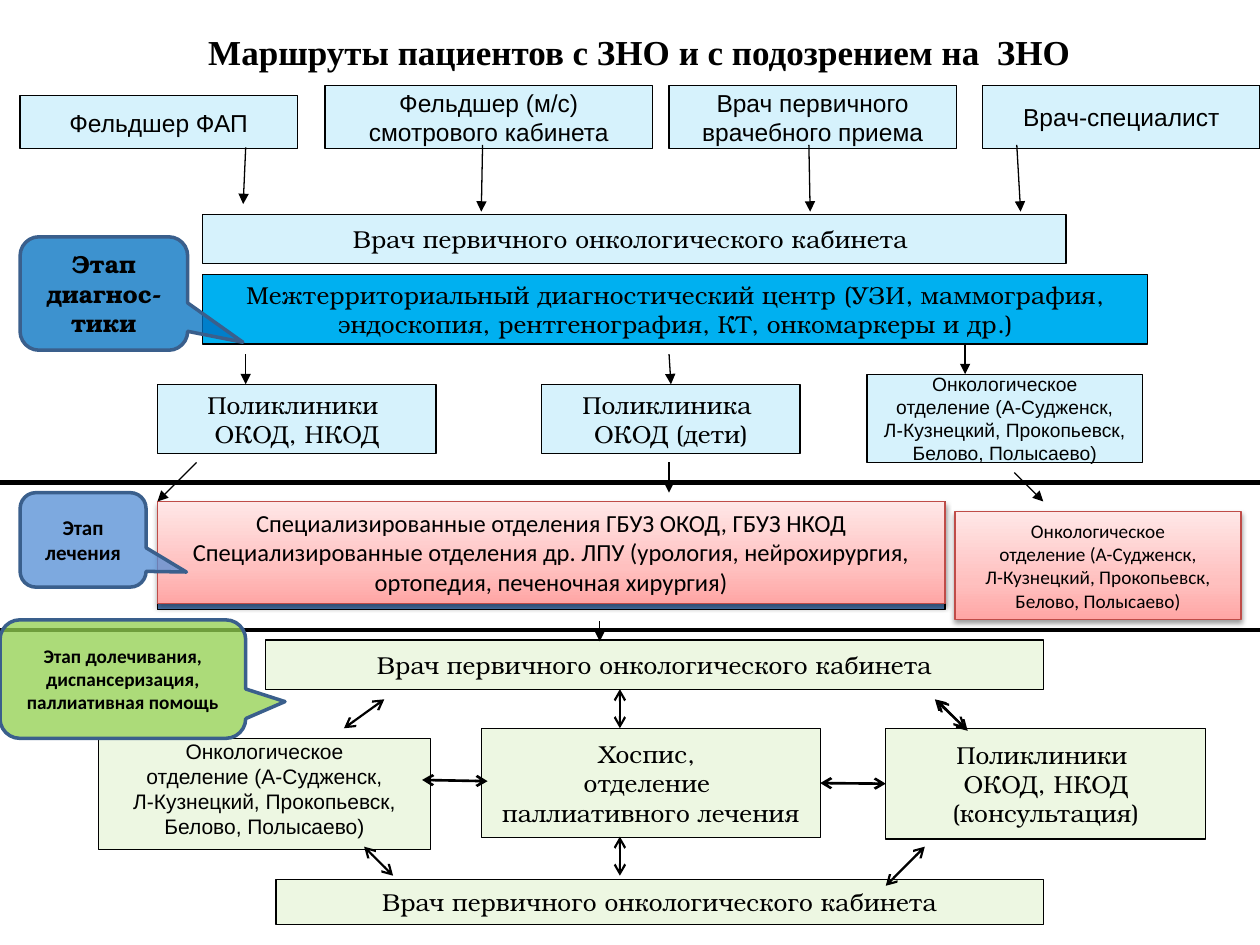
from lxml.etree import SubElement
from pptx import Presentation
from pptx.dml.color import RGBColor
from pptx.enum.shapes import MSO_CONNECTOR as CONNECTOR, MSO_SHAPE as SHAPE
from pptx.enum.text import MSO_ANCHOR as ANCHOR, PP_ALIGN as ALIGN
from pptx.oxml.ns import qn
from pptx.util import Inches, Pt

SERIF, SANS, BODY = "TeX Gyre Bonum", "Arial", "Calibri"
BLUE, GREEN, PINK = "00B0F0", "92D050", "FFA6A5"
PINK_STOPS = [(0, PINK), (35, "FFC0BF"), (100, "FFE7E7")]
color = RGBColor.from_string


def add_box(place, text, font, size, fill, alpha=100, tip=None, wrap=False):
    """Add a box, or a callout when tip is given; a pink one gets a gradient and a shadow."""
    kind = SHAPE.ROUNDED_RECTANGULAR_CALLOUT if tip else SHAPE.RECTANGLE
    shape = slide.shapes.add_shape(kind, *[Inches(value) for value in place])
    shape.shadow.inherit = False
    properties = shape._element.spPr
    shape.line.color.rgb = color("3A5F8C" if tip else "BF4C48" if fill == PINK else "000000")
    shape.line.width = Pt(2 if tip else 0.75)
    if tip:
        for index, value in enumerate((*tip, 0.167)):
            shape.adjustments[index] = value
    if fill == PINK:
        shape.fill.gradient()
        shape.fill.gradient_angle = 90
        stops = properties.find(".//" + qn("a:gsLst"))
        for stop in list(stops):
            stops.remove(stop)
        for position, stop_color in PINK_STOPS:
            stop = SubElement(stops, qn("a:gs"), pos=str(position * 1000))
            SubElement(stop, qn("a:srgbClr"), val=stop_color)
        shadow = SubElement(properties.find(qn("a:effectLst")), qn("a:outerShdw"),
                            blurRad="40000", dist="20000", dir="5400000", rotWithShape="0")
        shadow_color = SubElement(shadow, qn("a:srgbClr"), val="000000")
        SubElement(shadow_color, qn("a:alpha"), val="38000")
    else:
        shape.fill.solid()
        shape.fill.fore_color.rgb = color(fill)
        if alpha < 100:
            fill_color = properties.find(qn("a:solidFill")).find(qn("a:srgbClr"))
            SubElement(fill_color, qn("a:alpha"), val=str(alpha * 1000))
    frame = shape.text_frame
    frame.word_wrap = wrap or tip is not None
    frame.vertical_anchor = ANCHOR.MIDDLE
    for index, line in enumerate(text.split("\n") if text else []):
        paragraph = frame.add_paragraph() if index else frame.paragraphs[0]
        paragraph.alignment = ALIGN.CENTER
        run = paragraph.add_run()
        run.text = line
        run.font.name, run.font.size = font, Pt(size)
        run.font.bold = tip is not None
        run.font.color.rgb = color("000000")
    return shape


def add_line(ends, width=0.75, head=None, tail=None):
    connector = slide.shapes.add_connector(CONNECTOR.STRAIGHT, *[Inches(value) for value in ends])
    connector.line.color.rgb = color("000000")
    connector.line.width = Pt(width)
    for tag, arrow in (("a:headEnd", head), ("a:tailEnd", tail)):
        if arrow:
            SubElement(connector.line._get_or_add_ln(), qn(tag), type=arrow)
    SubElement(connector._element.spPr, qn("a:effectLst"))
    return connector


presentation = Presentation()
presentation.slide_width, presentation.slide_height = Inches(10), Inches(7.5)
slide = presentation.slides.add_slide(presentation.slide_layouts[5])

# Title
title = slide.shapes.title
title.left, title.top, title.width, title.height = [Inches(v) for v in (0.43, 0.13, 9.29, 0.55)]
title.text_frame.vertical_anchor = ANCHOR.MIDDLE
paragraph = title.text_frame.paragraphs[0]
paragraph.alignment = ALIGN.CENTER
run = paragraph.add_run()
run.text = "Маршруты пациентов с ЗНО и с подозрением на  ЗНО"
run.font.name, run.font.size, run.font.bold = "Times New Roman", Pt(20), True
run.font.color.rgb = color("000000")

# Wording that several boxes share
office = "Врач первичного онкологического кабинета"
department = ("Онкологическое\nотделение (А-Судженск,\n"
              "Л-Кузнецкий, Прокопьевск,\nБелово, Полысаево)")
clinics = "Поликлиники \nОКОД, НКОД"

# First contact and diagnostics
for place, text, font in [
    ((0.16, 0.76, 2.2, 0.42), "Фельдшер ФАП", SANS),
    ((2.58, 0.68, 2.6, 0.5), "Фельдшер (м/с)\nсмотрового кабинета", SANS),
    ((5.31, 0.68, 2.28, 0.5), "Врач первичного\nврачебного приема", SANS),
    ((7.8, 0.68, 2.2, 0.5), "Врач-специалист", SANS),
    ((1.61, 1.7, 6.85, 0.39), office + " ", SERIF),
    ((1.25, 3.05, 2.21, 0.55), clinics, SERIF),
]:
    add_box(place, text, font, 14, BLUE, 16)
children_clinic = add_box((4.3, 3.05, 2.05, 0.55), "Поликлиника \nОКОД (дети)", SERIF, 14, BLUE, 16)
add_box((6.88, 2.97, 2.19, 0.7), department, SANS, 11, BLUE, 16)
add_box((1.61, 2.18, 7.5, 0.55),
        "Межтерриториальный диагностический центр (УЗИ, маммография,\n"
        "эндоскопия, рентгенография, КТ, онкомаркеры и др.)", SERIF, 14, BLUE)

# Treatment
add_box((7.58, 4.06, 2.27, 0.86), department, BODY, 11, PINK)
add_box((1.25, 3.98, 6.25, 0.86), "", BODY, 14, "4F81BD")
treatment = add_box(
    (1.25, 3.98, 6.25, 0.81),
    "Специализированные отделения ГБУЗ ОКОД, ГБУЗ НКОД\n"
    "Специализированные отделения др. ЛПУ (урология, нейрохирургия, "
    "ортопедия, печеночная хирургия)", BODY, 14, PINK, wrap=True)
treatment.text_frame.vertical_anchor = ANCHOR.TOP

# Aftercare
for place in ((2.11, 5.08, 6.17, 0.39), (2.19, 6.98, 6.09, 0.36)):
    add_box(place, office, SERIF, 14, GREEN, 16)
aftercare = add_box((0.78, 5.86, 2.64, 0.88), department, SANS, 12, GREEN, 16)
aftercare.text_frame.margin_bottom = Inches(0.13)
hospice = add_box((3.82, 5.78, 2.69, 0.87), "Хоспис, \nотделение \nпаллиативного лечения",
                  SERIF, 14, GREEN, 16)
consultation = add_box((7.03, 5.78, 2.54, 0.88), clinics + "\n(консультация)", SERIF, 14, GREEN, 16)

# One-way arrows
for ends in [
    (1.95, 1.17, 1.93, 1.62), (3.83, 1.15, 3.82, 1.68),
    (6.42, 1.15, 6.43, 1.68), (8.07, 1.15, 8.1, 1.68),
    (1.95, 2.81, 1.95, 3.05), (7.66, 2.73, 7.66, 2.97),
    (4.76, 4.93, 4.76, 5.09), (1.56, 3.67, 1.25, 3.98),
    (5.31, 3.67, 5.31, 3.91), (8.05, 3.75, 8.28, 3.98),
]:
    add_line(ends, tail="triangle")
to_children = add_line((5.31, 2.81, 5.31, 3.05), tail="triangle")
to_children.end_connect(children_clinic, 0)

# Two-way arrows
for ends in [
    (7.42, 5.55, 7.66, 5.78), (7.44, 5.56, 7.68, 5.8), (2.89, 6.72, 3.12, 6.95),
    (3.05, 5.55, 2.73, 5.78), (4.92, 5.47, 4.92, 5.78),
    (7.34, 6.72, 7.03, 7.03), (4.92, 6.64, 4.92, 6.95),
]:
    add_line(ends, 1.25, "arrow", "arrow")
add_line((3.35, 6.19, 3.87, 6.2), 1.5, "arrow", "arrow")
hospice_link = add_line((6.51, 6.22, 7.03, 6.22), 1.5, "arrow", "arrow")
hospice_link.begin_connect(hospice, 3)
hospice_link.end_connect(consultation, 1)

# Stage dividers
for top in (3.83, 5):
    add_line((10, top, 0, top), 2.5)

# Stage callouts
for place, tip, text, font, size, fill in [
    ((0.16, 1.88, 1.33, 0.9), (0.83, 0.43), "Этап диагнос-тики", SERIF, 14, "0070C0"),
    ((0.16, 3.91, 1, 0.75), (0.82, 0.34), "Этап лечения", BODY, 12, "558ED5"),
    ((0, 4.92, 1.95, 0.94), (0.66, 0.19),
     "Этап долечивания,\nдиспансеризация,\nпаллиативная помощь", BODY, 11, GREEN),
]:
    add_box(place, text, font, size, fill, 76, tip)

presentation.save("out.pptx")
